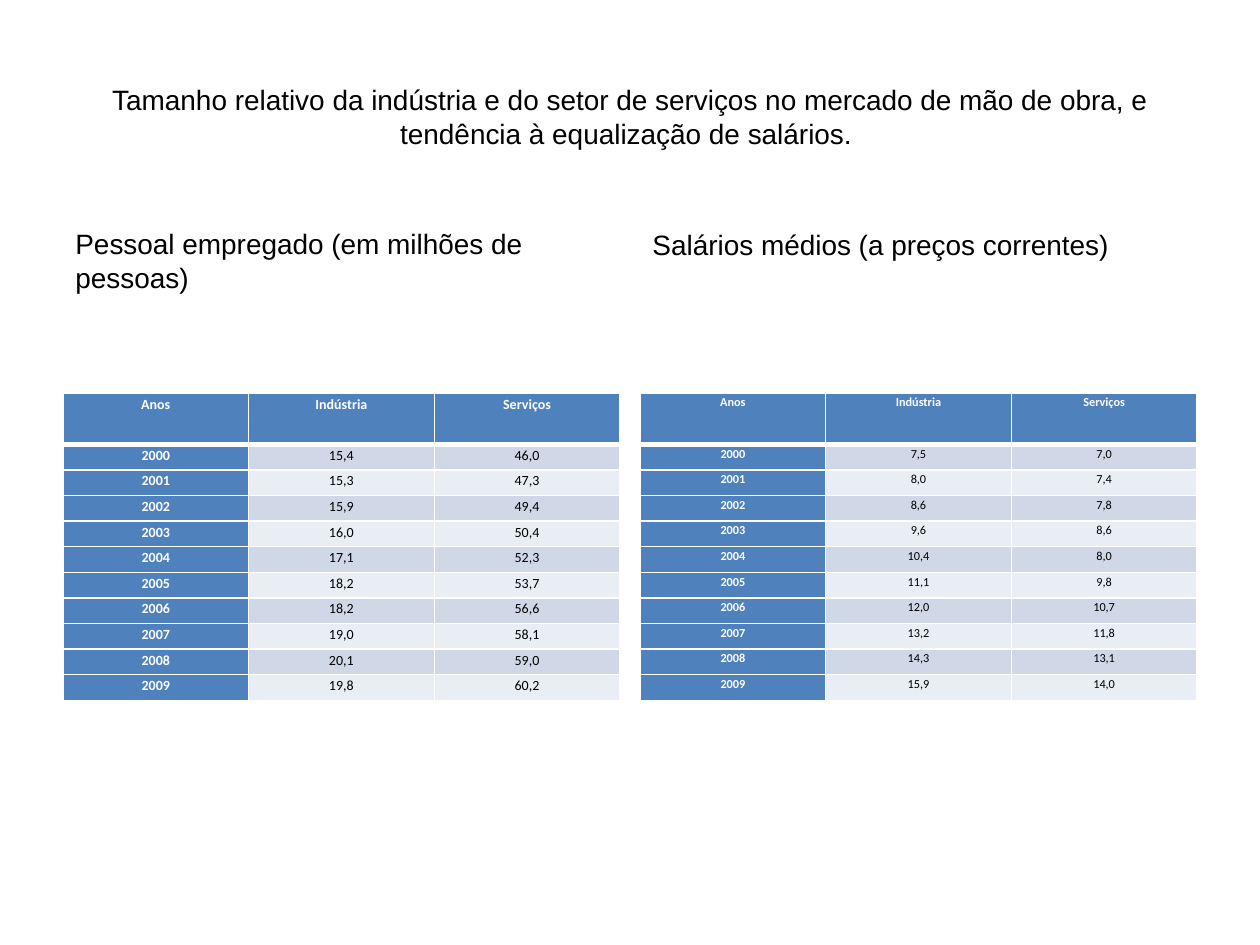
from lxml.etree import SubElement
from pptx import Presentation
from pptx.dml.color import RGBColor
from pptx.enum.text import MSO_ANCHOR, PP_ALIGN
from pptx.oxml.ns import qn
from pptx.util import Inches, Pt


def style(p, size, color, name="Arial", bold=False):
    p.font.size = Pt(size)
    p.font.name = name
    p.font.bold = bold
    p.font.color.rgb = RGBColor.from_string(color)


def add_text(s, text, box, anchor, align, bottom=0.05):
    sp = s.shapes.add_textbox(*[Inches(v) for v in box])
    tf = sp.text_frame
    tf.word_wrap = True
    tf.vertical_anchor = anchor
    tf.margin_bottom = Inches(bottom)
    p = tf.paragraphs[0]
    p.text = text
    p.alignment = align
    style(p, 16, "000000")


prs = Presentation()
prs.slide_width, prs.slide_height = Inches(10), Inches(7.5)
s = prs.slides.add_slide(prs.slide_layouts[6])

margin, col_w, gap = 0.5, 4.42, 0.16
row_h = Inches(2.44 / 12)
header = ["Anos", "Indústria", "Serviços"]
years = [str(y) for y in range(2000, 2010)]

panels = [
    ("Pessoal empregado (em milhões de pessoas)", 8, 0.05,
     "15,4 15,3 15,9 16,0 17,1 18,2 18,2 19,0 20,1 19,8",
     "46,0 47,3 49,4 50,4 52,3 53,7 56,6 58,1 59,0 60,2"),
    ("Salários médios (a preços correntes)", 7, 0.31,
     "7,5 8,0 8,6 9,6 10,4 11,1 12,0 13,2 14,3 15,9",
     "7,0 7,4 7,8 8,6 8,0 9,8 10,7 11,8 13,1 14,0"),
]

add_text(s, "Tamanho relativo da indústria e do setor de serviços no mercado "
         "de mão de obra, e tendência à equalização de salários. ",
         (margin, 0.3, 9, 1.25), MSO_ANCHOR.MIDDLE, PP_ALIGN.CENTER)

for i, (heading, size, bottom, industry, services) in enumerate(panels):
    x = margin + i * (col_w + gap)
    add_text(s, heading, (x, 1.68, col_w, 0.7), MSO_ANCHOR.BOTTOM,
             PP_ALIGN.LEFT, bottom)

    rows = [header, *zip(years, industry.split(), services.split())]
    table = s.shapes.add_table(len(rows), len(header), Inches(x), Inches(3.12),
                               Inches(col_w), row_h * 12).table
    for r, values in enumerate(rows):
        table.rows[r].height = row_h * (2 if r == 0 else 1)
        for c, value in enumerate(values):
            cell = table.cell(r, c)
            cell.margin_left = cell.margin_right = Inches(0.06)
            cell.margin_top = cell.margin_bottom = 0
            cell.vertical_anchor = MSO_ANCHOR.TOP

            tcPr = cell._tc.get_or_add_tcPr()
            for side in "LRTB":
                thick = (r, side) in [(0, "B"), (1, "T")]
                ln = SubElement(tcPr, qn("a:ln" + side), w=str(Pt(3 if thick else 1)))
                fill = SubElement(ln, qn("a:solidFill"))
                SubElement(fill, qn("a:srgbClr"), val="FFFFFF")

            label = r == 0 or c == 0
            color = "4F81BD" if label else "D0D8E8" if r % 2 else "E9EDF4"
            cell.fill.solid()
            cell.fill.fore_color.rgb = RGBColor.from_string(color)

            p = cell.text_frame.paragraphs[0]
            p.text = value
            p.alignment = PP_ALIGN.CENTER
            p.line_spacing = 1.15
            style(p, size, "FFFFFF" if label else "000000", "Calibri", label)

prs.save("out.pptx")
